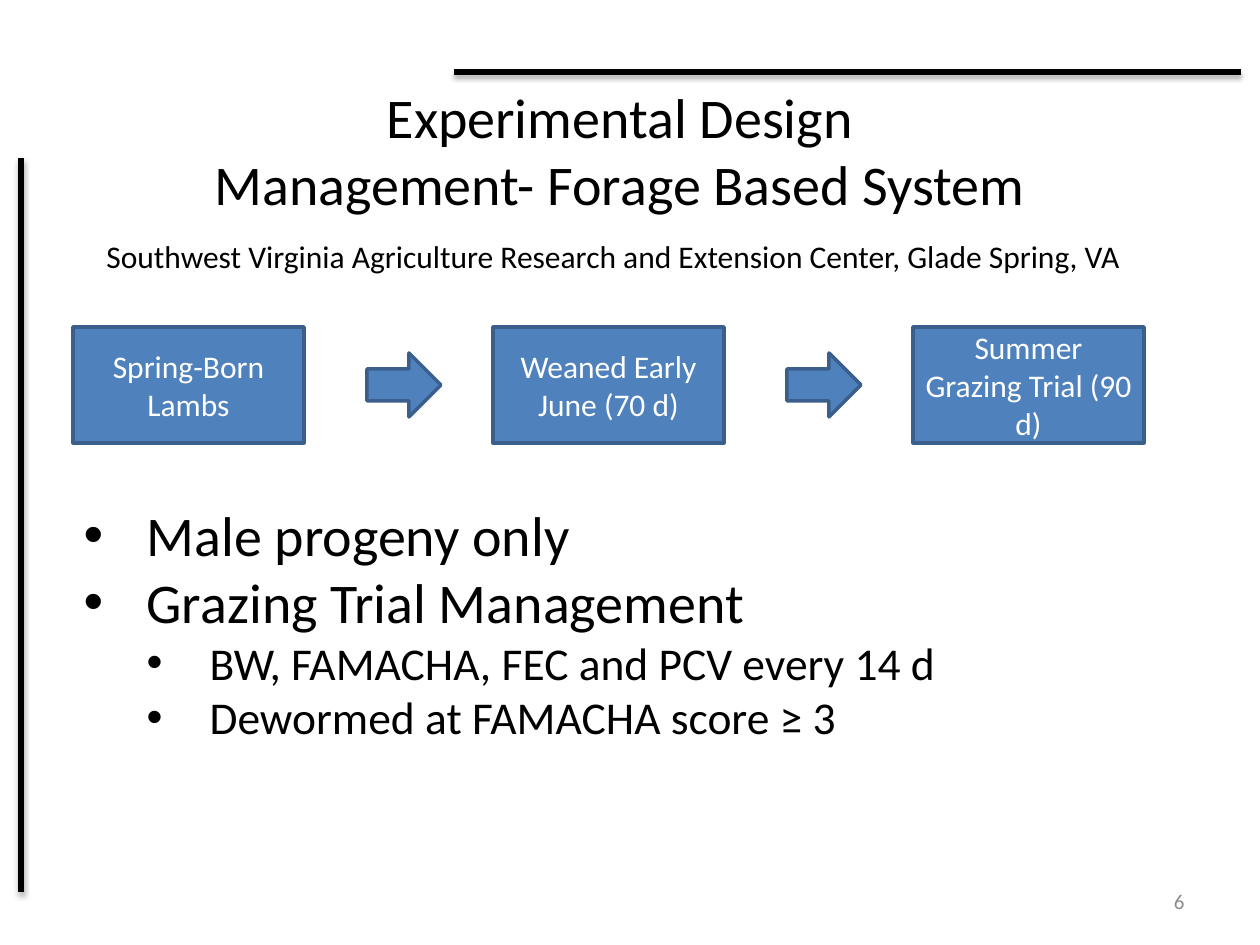
from lxml import etree
from pptx import Presentation
from pptx import util as u
from pptx.dml.color import RGBColor
from pptx.enum import shapes, text
from pptx.oxml import parse_xml
from pptx.oxml.ns import nsdecls, qn

SCALE = 914400 / 126  # EMU in one px


def px(*lengths):
    return [u.Emu(round(length * SCALE)) for length in lengths]


def add_text(para, words, size, color):
    span = para.add_run()
    span.text = words
    span.font.name = "Calibri"
    span.font.size = u.Pt(size)
    span.font.color.rgb = RGBColor.from_string(color)


deck = Presentation()
deck.slide_width, deck.slide_height = px(1260, 945)
page = deck.slides.add_slide(deck.slide_layouts[1])

# Frame lines with a soft shadow
for ends in [(454, 72, 1241, 72), (21, 158, 21, 892)]:
    line = page.shapes.add_connector(shapes.MSO_CONNECTOR.STRAIGHT, *px(*ends))
    line.line.color.rgb = RGBColor.from_string("000000")
    line.line.width = u.Pt(3)
    line._element.spPr.append(parse_xml(
        f'<a:effectLst {nsdecls("a")}>'
        '<a:outerShdw blurRad="39370" dist="22860" dir="5400000" rotWithShape="0">'
        '<a:srgbClr val="000000"><a:alpha val="35000"/></a:srgbClr>'
        '</a:outerShdw></a:effectLst>'))

# Title
title = page.shapes.title
title.left, title.top, title.width, title.height = px(53, 71, 1134, 158)
title.text_frame.auto_size = text.MSO_AUTO_SIZE.NONE
title.text_frame.vertical_anchor = text.MSO_ANCHOR.MIDDLE
para = title.text_frame.paragraphs[0]
para.alignment = text.PP_ALIGN.CENTER
add_text(para, "Experimental Design", 32, "000000")
para.add_line_break()
add_text(para, "Management- Forage Based System", 32, "000000")

# Place of the trial
place = page.shapes.add_textbox(*px(94, 231, 1134, 89))
place.text_frame.word_wrap = True
add_text(place.text_frame.paragraphs[0],
         "Southwest Virginia Agriculture Research and Extension Center, Glade Spring, VA",
         18, "000000")

# Slide number
number = page.shapes.add_textbox(*px(903, 876, 294, 50))
number.text_frame.word_wrap = True
number.text_frame.vertical_anchor = text.MSO_ANCHOR.MIDDLE
para = number.text_frame.paragraphs[0]
para.alignment = text.PP_ALIGN.RIGHT
add_text(para, "6", 12, "8C8C8C")

# Flow of three steps, with an arrow between neighbours
STEP_PITCH = 420
steps = ["Spring-Born Lambs", "Weaned Early June (70 d)", "Summer Grazing Trial (90 d)"]
flow = []
for index, step in enumerate(steps):
    left = 73 + index * STEP_PITCH
    box = page.shapes.add_shape(shapes.MSO_SHAPE.RECTANGLE, *px(left, 327, 231, 116))
    box.text_frame.word_wrap = True
    box.text_frame.vertical_anchor = text.MSO_ANCHOR.MIDDLE
    para = box.text_frame.paragraphs[0]
    para.alignment = text.PP_ALIGN.CENTER
    add_text(para, step, 18, "FFFFFF")
    flow.append(box)
    if index < len(steps) - 1:
        flow.append(page.shapes.add_shape(
            shapes.MSO_SHAPE.RIGHT_ARROW, *px(left + 294, 353, 74, 64)))
for shape in flow:
    shape.shadow.inherit = False
    shape.fill.solid()
    shape.fill.fore_color.rgb = RGBColor.from_string("4F81BD")
    shape.line.color.rgb = RGBColor.from_string("3A5F8C")
    shape.line.width = u.Pt(2)

# Bulleted list
body = page.placeholders[1]
body.left, body.top, body.width, body.height = px(71, 494, 1071, 258)
body.text_frame.auto_size = text.MSO_AUTO_SIZE.NONE
items = [
    (0, "Male progeny only"),
    (0, "Grazing Trial Management"),
    (1, "BW, FAMACHA, FEC and PCV every 14 d"),
    (1, "Dewormed at FAMACHA score ≥ 3"),
]
for index, (level, item) in enumerate(items):
    para = body.text_frame.paragraphs[0] if index == 0 else body.text_frame.add_paragraph()
    para.level = level
    para.space_before = u.Pt(0)
    props = para._p.get_or_add_pPr()
    props.set("marL", str(u.Inches(0.5 * (level + 1))))
    props.set("indent", str(u.Inches(-0.5)))
    etree.SubElement(props, qn("a:buFont")).set("typeface", "Arial")
    etree.SubElement(props, qn("a:buChar")).set("char", "•")
    add_text(para, item, (32, 26)[level], "000000")

deck.save("out.pptx")
